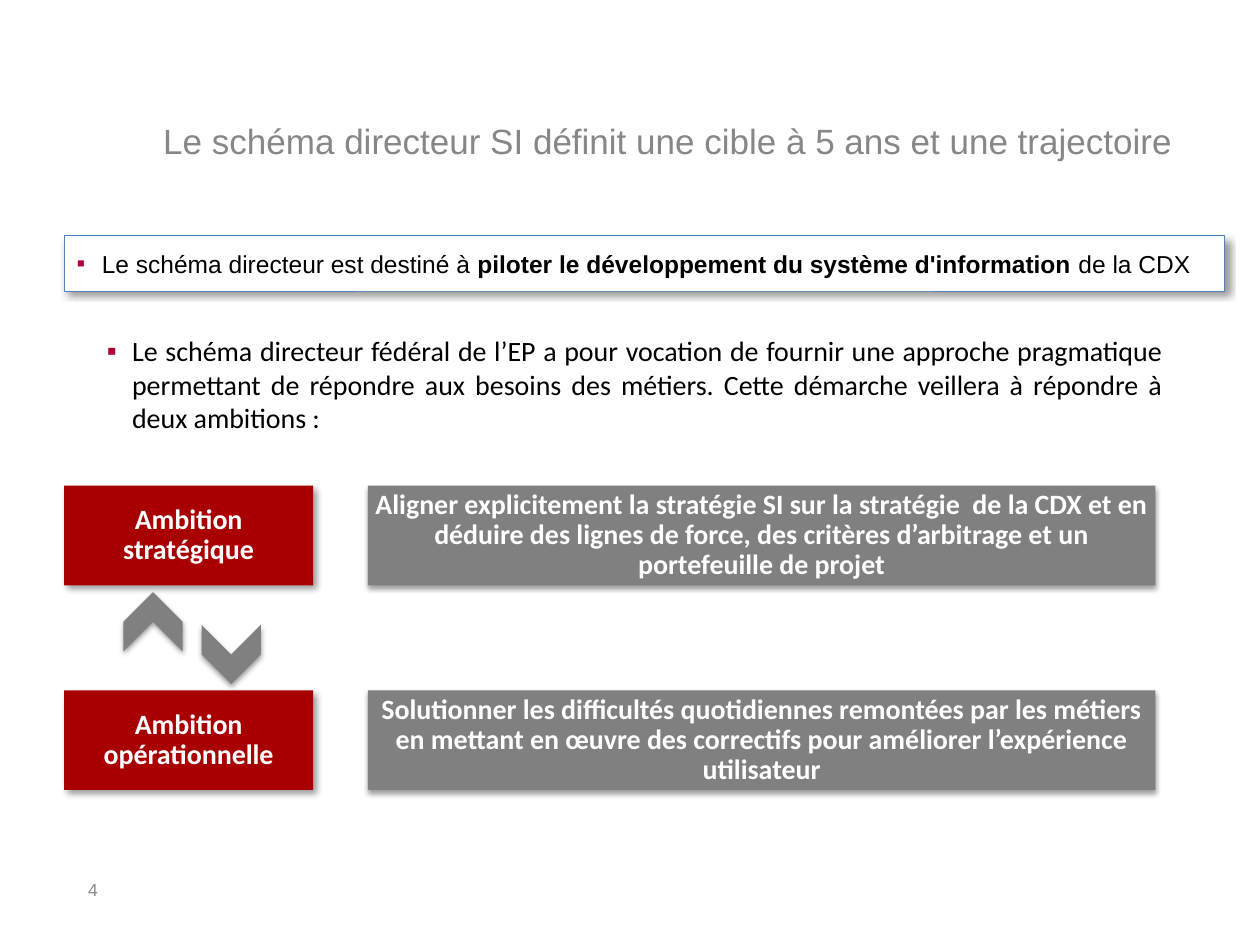
import pptx
import pptx.util
import pptx.dml.color
import pptx.enum.shapes
import pptx.enum.text
import pptx.oxml
import pptx.oxml.ns

RGBColor = pptx.dml.color.RGBColor
Align = pptx.enum.text.PP_ALIGN
Anchor = pptx.enum.text.MSO_ANCHOR
Preset = pptx.enum.shapes.MSO_SHAPE

RED = RGBColor(0xA8, 0x00, 0x00)
GREY = RGBColor(0x80, 0x80, 0x80)
TITLE_GREY = RGBColor(0x86, 0x87, 0x88)
BLUE = RGBColor(0x4F, 0x81, 0xBD)
BULLET = RGBColor(0xB1, 0x00, 0x34)
WHITE = RGBColor(0xFF, 0xFF, 0xFF)
BLACK = RGBColor(0x00, 0x00, 0x00)

COLUMNS, ROWS = 100, 75
DIAGONAL_SHADOW = (40, 4, 3, 45)
LOW_SHADOW = (38, 3.1, 1.6, 90)


class SlideBuilder:
    def __init__(self, presentation):
        self.cell_width = presentation.slide_width / COLUMNS
        self.cell_height = presentation.slide_height / ROWS
        self.slide = presentation.slides.add_slide(presentation.slide_layouts[5])

    def area(self, column, row, columns, rows):
        return (round(column * self.cell_width), round(row * self.cell_height),
                round(columns * self.cell_width), round(rows * self.cell_height))

    def frame(self, element, insets, anchor):
        frame = element.text_frame
        frame.word_wrap = True
        frame.auto_size = pptx.enum.text.MSO_AUTO_SIZE.NONE
        frame.vertical_anchor = anchor
        frame.margin_left, frame.margin_top, frame.margin_right, frame.margin_bottom = (
            pptx.util.Inches(inset) for inset in insets)
        return frame

    def style(self, paragraph, font, size, colour, align, bold=False):
        paragraph.alignment = align
        for run in paragraph.runs:
            run.font.name = font
            run.font.size = pptx.util.Pt(size)
            run.font.color.rgb = colour
            run.font.bold = bold

    def title(self, place, text):
        heading = self.slide.shapes.title
        heading.left, heading.top, heading.width, heading.height = self.area(*place)
        frame = self.frame(heading, (0.1, 0.05, 0.1, 0.05), Anchor.MIDDLE)
        frame.text = text
        self.style(frame.paragraphs[0], "Arial", 20, TITLE_GREY, Align.RIGHT)

    def page_number(self, place, text):
        number = self.slide.shapes.add_textbox(*self.area(*place))
        frame = self.frame(number, (0, 0, 0, 0), Anchor.TOP)
        frame.text = text
        self.style(frame.paragraphs[0], "Arial", 10, TITLE_GREY, Align.LEFT)

    def block(self, place, fill, shadow=None, preset=Preset.RECTANGLE, outline=None):
        block = self.slide.shapes.add_shape(preset, *self.area(*place))
        block.shadow.inherit = False
        block.fill.solid()
        block.fill.fore_color.rgb = fill
        if outline:
            block.line.color.rgb = outline
            block.line.width = pptx.util.Pt(0.25)
        else:
            block.line.fill.background()
        if shadow:
            self.cast_shadow(block, *shadow)
        return block

    def cast_shadow(self, block, opacity, blur, distance, angle):
        effects = block.element.spPr.find(pptx.oxml.ns.qn("a:effectLst"))
        effects.append(pptx.oxml.parse_xml(
            f'<a:outerShdw {pptx.oxml.ns.nsdecls("a")} blurRad="{pptx.util.Pt(blur)}" '
            f'dist="{pptx.util.Pt(distance)}" dir="{angle * 60000}" rotWithShape="0">'
            f'<a:srgbClr val="{BLACK}"><a:alpha val="{opacity * 1000}"/></a:srgbClr>'
            '</a:outerShdw>'))

    def label(self, place, text, fill, shadow, side_inset):
        block = self.block(place, fill, shadow)
        frame = self.frame(block, (side_inset, 0.05, side_inset, 0.05), Anchor.MIDDLE)
        frame.text = text
        frame.paragraphs[0].line_spacing = 0.9
        self.style(frame.paragraphs[0], "Calibri", 16, WHITE, Align.CENTER, True)

    def statement(self, block, parts, font, size, align, top_inset, anchor, strong=None):
        frame = self.frame(block, (0.1, top_inset, 0.1, 0.05), anchor)
        paragraph = frame.paragraphs[0]
        for part in parts:
            paragraph.add_run().text = part
        self.style(paragraph, font, size, BLACK, align)
        if strong is not None:
            paragraph.runs[strong].font.bold = True
        paragraph.space_before = pptx.util.Pt(6)
        paragraph.space_after = pptx.util.Pt(3)
        self.bullet(paragraph)

    def bullet(self, paragraph):
        properties = paragraph._p.get_or_add_pPr()
        indent = pptx.util.Inches(0.2)
        properties.set("marL", str(indent))
        properties.set("indent", str(-indent))
        namespace = pptx.oxml.ns.nsdecls("a")
        for content in (f'<a:buClr {namespace}><a:srgbClr val="{BULLET}"/></a:buClr>',
                        f'<a:buFont {namespace} typeface="Arial"/>',
                        f'<a:buChar {namespace} char="▪"/>'):
            properties.append(pptx.oxml.parse_xml(content))

    def chevron(self, column, row, rotation):
        arrow = self.block((column, row, 4.7, 4.7), GREY, LOW_SHADOW, Preset.CHEVRON)
        arrow.rotation = rotation


def main():
    presentation = pptx.Presentation()
    presentation.slide_width = pptx.util.Inches(10)
    presentation.slide_height = pptx.util.Inches(7.5)
    page = SlideBuilder(presentation)

    page.page_number((7, 69.8, 3.9, 1.6), "4")
    page.title((3.5, 9.2, 90.6, 3.9),
               "Le schéma directeur SI définit une cible à 5 ans et une trajectoire")

    purpose = page.block((5.1, 18.7, 92.1, 4.4), WHITE, DIAGONAL_SHADOW, outline=BLUE)
    page.statement(purpose,
                   ("Le schéma directeur est destiné à ",
                    "piloter le développement du système d'information ",
                    "de la CDX"),
                   "Arial", 14, Align.LEFT, 0.05, Anchor.MIDDLE, strong=1)

    approach = page.block((7.5, 25.2, 85.8, 10), WHITE)
    page.statement(approach,
                   ("Le schéma directeur fédéral de l’EP a pour vocation de fournir une "
                    "approche pragmatique permettant de répondre aux besoins des métiers. "
                    "Cette démarche veillera à répondre à deux ambitions :",),
                   "Calibri", 16, Align.JUSTIFY, 0.13, Anchor.TOP)

    ambitions = (
        (38.55, "Ambition stratégique",
         "Aligner explicitement la stratégie SI sur la stratégie  de la CDX et en déduire "
         "des lignes de force, des critères d’arbitrage et un portefeuille de projet"),
        (54.8, "Ambition opérationnelle",
         "Solutionner les difficultés quotidiennes remontées par les métiers en mettant "
         "en œuvre des correctifs pour améliorer l’expérience utilisateur"),
    )
    for row, ambition, goal in ambitions:
        page.label((5.1, row, 19.75, 7.9), ambition, RED, DIAGONAL_SHADOW, 0.1)
        page.label((29.2, row, 62.5, 7.9), goal, GREY, LOW_SHADOW, 0.04)

    page.chevron(9.8, 47, 270)
    page.chevron(16, 49.6, 90)

    presentation.save("out.pptx")


if __name__ == "__main__":
    main()
